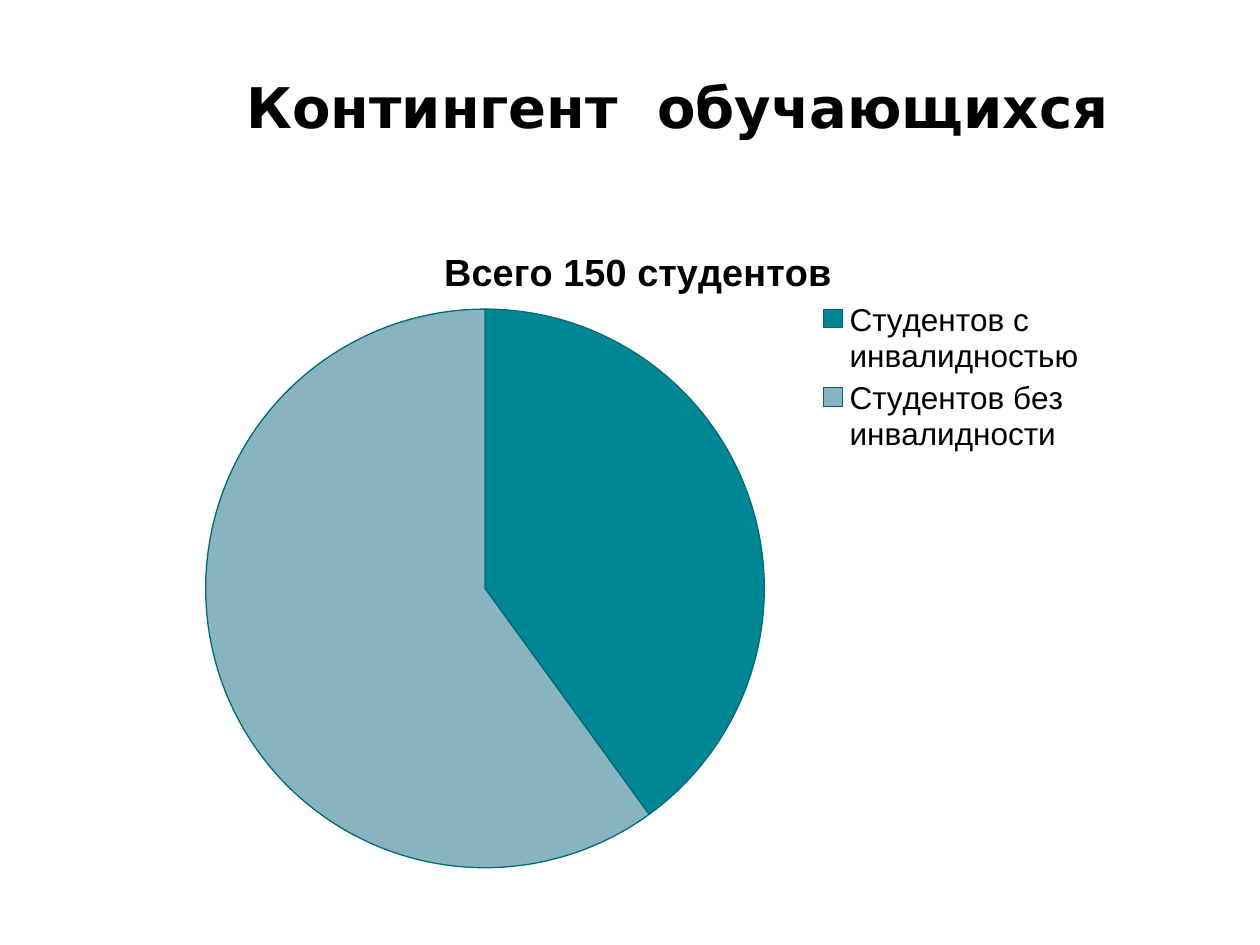
from lxml import etree
from pptx import Presentation, util as u
from pptx.chart.data import CategoryChartData
from pptx.dml.color import RGBColor
from pptx.enum import chart as ch, text
from pptx.oxml import ns

BLACK = RGBColor(0x00, 0x00, 0x00)
TEAL = RGBColor(0x00, 0x87, 0x95)
PALE_TEAL = RGBColor(0x88, 0xB4, 0xBF)
EDGE = RGBColor(0x00, 0x6B, 0x76)


class Deck:
    """Holds the style and the current slide; boxes are shares of its size."""

    heading_font = "DejaVu Sans"
    body_font = "Arial"

    def __init__(self, width, height):
        self.prs = Presentation()
        self.prs.slide_width = u.Inches(width)
        self.prs.slide_height = u.Inches(height)
        self.slide = self.prs.slides.add_slide(self.prs.slide_layouts[5])

    def box(self, x, y, w, h):
        sw, sh = self.prs.slide_width, self.prs.slide_height
        return int(x * sw), int(y * sh), int(w * sw), int(h * sh)

    def style(self, font, face, size, bold=False):
        font.name, font.size, font.bold = face, u.Pt(size), bold
        font.color.rgb = BLACK

    def title(self, wording, *share):
        heading = self.slide.shapes.title
        heading.left, heading.top, heading.width, heading.height = self.box(*share)
        frame = heading.text_frame
        frame.margin_left = frame.margin_right = u.Inches(0.1)
        frame.margin_top = frame.margin_bottom = u.Inches(0.1)
        frame.vertical_anchor = text.MSO_ANCHOR.MIDDLE
        frame.paragraphs[0].alignment = text.PP_ALIGN.CENTER
        run = frame.paragraphs[0].add_run()
        run.text = wording
        self.style(run.font, self.heading_font, 32, bold=True)

    def place(self, part, **shares):
        """Fix a chart part at shares of the chart's size."""
        layout = part.find(ns.qn("c:layout"))
        if layout is None:
            layout = etree.Element(ns.qn("c:layout"))
            before = part.find(ns.qn("c:tx"))
            if before is None:
                before = part.find(ns.qn("c:legendPos"))
            if before is None:
                part.insert(0, layout)
            else:
                before.addnext(layout)
        for child in list(layout):
            layout.remove(child)
        manual = etree.SubElement(layout, ns.qn("c:manualLayout"))
        settings = {"xMode": "edge", "yMode": "edge", **shares}
        if part.tag == ns.qn("c:plotArea"):
            settings = {"layoutTarget": "inner", **settings}
        for key, value in settings.items():
            etree.SubElement(manual, ns.qn(f"c:{key}")).set("val", str(value))

    def pie(self, caption, slices, *share):
        data = CategoryChartData()
        data.categories = [name for name, _, _ in slices]
        data.add_series(caption, [value for _, value, _ in slices])
        chart = self.slide.shapes.add_chart(
            ch.XL_CHART_TYPE.PIE, *self.box(*share), data).chart
        self.style(chart.font, self.body_font, 18)

        # Chart title
        chart.has_title = True
        run = chart.chart_title.text_frame.paragraphs[0].add_run()
        run.text = caption
        self.style(run.font, self.body_font, 21.6, bold=True)
        self.place(chart.chart_title._element, x=0.32, y=0.05)

        # Legend
        chart.has_legend = True
        chart.legend.position = ch.XL_LEGEND_POSITION.RIGHT
        chart.legend.include_in_layout = False
        self.style(chart.legend.font, self.body_font, 18)
        self.place(chart.legend._element, x=0.67, y=0.13, w=0.27, h=0.24)

        # Slices
        plot = chart.plots[0]
        plot.vary_by_categories = True
        for index, (_, _, colour) in enumerate(slices):
            look = plot.series[0].points[index].format
            look.fill.solid()
            look.fill.fore_color.rgb = colour
            look.line.color.rgb = EDGE
            look.line.width = u.Pt(0.75)
        plot_area = chart._chartSpace.find(".//" + ns.qn("c:plotArea"))
        self.place(plot_area, x=0.1, y=0.15, w=0.53, h=0.82)


def main():
    deck = Deck(10, 7.5)
    deck.title("Контингент  обучающихся", 0.11, 0.056, 0.856, 0.112)
    deck.pie(
        "Всего 150 студентов",
        [("Студентов с инвалидностью", 40, TEAL),
         ("Студентов без инвалидности", 60, PALE_TEAL)],
        0.078, 0.219, 0.841, 0.721)
    deck.prs.save("out.pptx")


if __name__ == "__main__":
    main()
